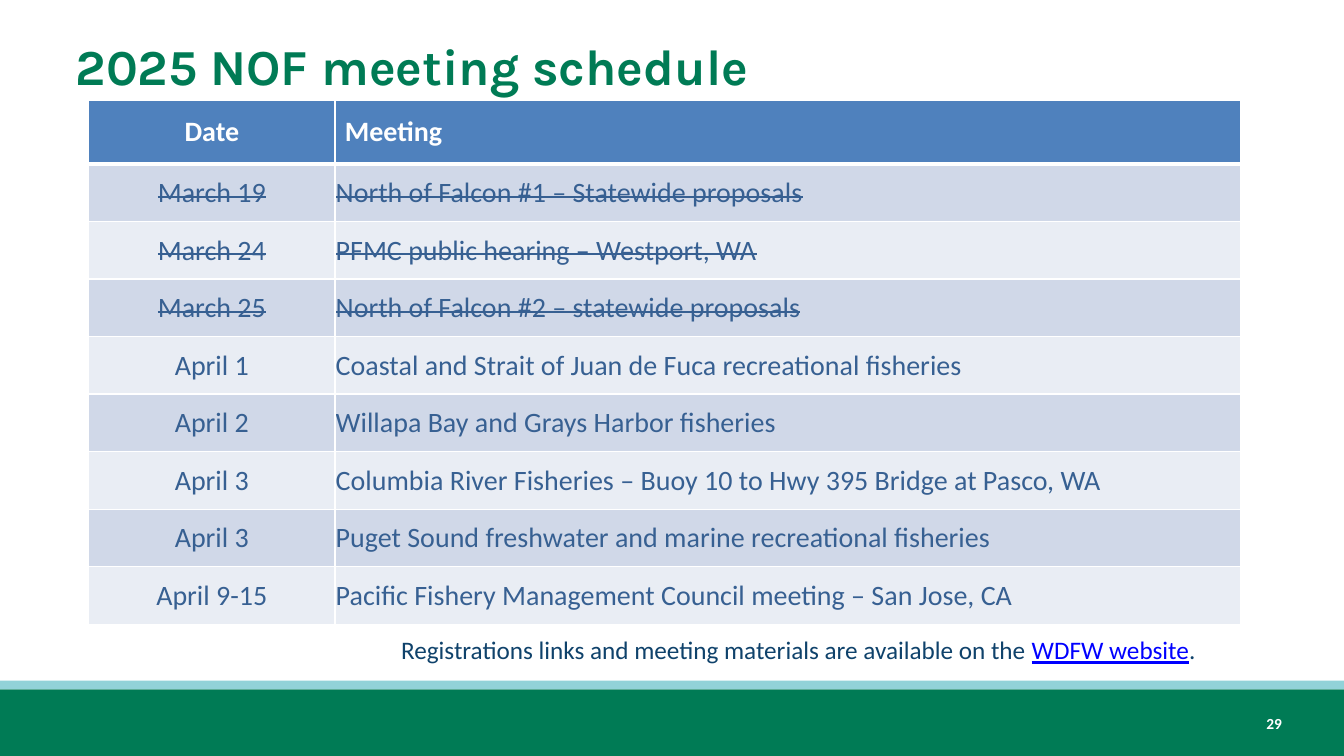
"""Build the 2025 NOF meeting schedule slide."""
from dataclasses import dataclass

from lxml.etree import SubElement
from pptx import Presentation
from pptx.dml.color import RGBColor
from pptx.enum.shapes import MSO_SHAPE
from pptx.enum.text import MSO_ANCHOR, PP_ALIGN
from pptx.oxml.ns import qn
from pptx.util import Cm, Pt


@dataclass(frozen=True)
class Theme:
    green: str = "007B55"
    aqua: str = "92D2D8"
    white: str = "FFFFFF"
    header: str = "4F81BD"
    bands: tuple = ("D0D8E8", "E9EDF4")
    table_text: str = "376092"
    note: str = "0F426B"
    link: str = "0000FF"
    title_font: str = "Karla"
    body_font: str = "Calibri"
    title_size: int = 36
    table_size: int = 20
    note_size: int = 18
    number_size: int = 11


theme = Theme()


def add_text(paragraph, text, size, color, font=theme.body_font, bold=False,
             underline=False, strike=False, align=PP_ALIGN.LEFT):
    paragraph.alignment = align
    run = paragraph.add_run()
    run.text = text
    run.font.name = font
    run.font.size = Pt(size)
    run.font.bold = bold
    run.font.underline = underline
    run.font.color.rgb = RGBColor.from_string(color)
    if strike:
        run.font._element.set("strike", "sngStrike")


def format_cell(cell, fill, margins, borders):
    properties = cell._tc.get_or_add_tcPr()
    for side, width in borders.items():
        line = SubElement(properties, qn(f"a:ln{side}"), w=str(Pt(width)))
        solid = SubElement(line, qn("a:solidFill"))
        SubElement(solid, qn("a:srgbClr"), val=theme.white)
    cell.fill.solid()
    cell.fill.fore_color.rgb = RGBColor.from_string(fill)
    cell.vertical_anchor = MSO_ANCHOR.MIDDLE
    (cell.margin_left, cell.margin_top,
     cell.margin_right, cell.margin_bottom) = [Cm(margin) for margin in margins]


presentation = Presentation()
presentation.slide_width = Cm(33.87)
presentation.slide_height = Cm(19.05)
slide = presentation.slides.add_slide(presentation.slide_layouts[5])

for top, height, color in ((17.37, 1.68, theme.green), (17.15, 0.22, theme.aqua)):
    band = slide.shapes.add_shape(MSO_SHAPE.RECTANGLE, 0, Cm(top),
                                  presentation.slide_width, Cm(height))
    band.shadow.inherit = False
    band.fill.solid()
    band.fill.fore_color.rgb = RGBColor.from_string(color)
    band.line.fill.background()

number = slide.shapes.add_textbox(Cm(30.58), Cm(17.86), Cm(1.98), Cm(0.74))
number.text_frame.word_wrap = True
add_text(number.text_frame.paragraphs[0], "29", theme.number_size, theme.white,
         bold=True, align=PP_ALIGN.RIGHT)

title = slide.shapes.title
title.left, title.top, title.width, title.height = Cm(1.65), Cm(0.43), Cm(30.53), Cm(2.41)
title.text_frame.vertical_anchor = MSO_ANCHOR.MIDDLE
add_text(title.text_frame.paragraphs[0], "2025 NOF meeting schedule", theme.title_size,
         theme.green, font=theme.title_font, bold=True)

meetings = [
    ("Date", "Meeting"),
    ("March 19", "North of Falcon #1 – Statewide proposals"),
    ("March 24", "PFMC public hearing – Westport, WA"),
    ("March 25", "North of Falcon #2 – statewide proposals"),
    ("April 1", "Coastal and Strait of Juan de Fuca recreational fisheries"),
    ("April 2", "Willapa Bay and Grays Harbor fisheries"),
    ("April 3", "Columbia River Fisheries – Buoy 10 to Hwy 395 Bridge at Pasco, WA"),
    ("April 3", "Puget Sound freshwater and marine recreational fisheries"),
    ("April 9-15", "Pacific Fishery Management Council meeting – San Jose, CA"),
]
header_height, row_height = 1.6, 1.45
column_widths = (6.2, 22.83)
table = slide.shapes.add_table(
    len(meetings), len(column_widths), Cm(2.24), Cm(2.53), Cm(sum(column_widths)),
    Cm(header_height + row_height * (len(meetings) - 1))).table
for column, width in zip(table.columns, column_widths):
    column.width = Cm(width)

for row_index, meeting in enumerate(meetings):
    is_header = row_index == 0
    is_past = meeting[0].startswith("March")
    table.rows[row_index].height = Cm(header_height if is_header else row_height)
    fill = theme.header if is_header else theme.bands[(row_index - 1) % 2]
    margins = (0.25, 0.13, 0.25, 0.13) if is_header else (0.02, 0.02, 0.02, 0)
    borders = {"L": 1, "R": 1, "T": 3 if row_index == 1 else 1, "B": 3 if is_header else 1}
    for column_index, text in enumerate(meeting):
        cell = table.cell(row_index, column_index)
        format_cell(cell, fill, margins, borders)
        add_text(cell.text_frame.paragraphs[0], text, theme.table_size,
                 theme.white if is_header else theme.table_text,
                 bold=is_header, strike=is_past,
                 align=PP_ALIGN.LEFT if column_index else PP_ALIGN.CENTER)

note = slide.shapes.add_textbox(Cm(9.86), Cm(15.95), Cm(21.41), Cm(0.94))
note.text_frame.word_wrap = True
note_paragraph = note.text_frame.paragraphs[0]
note_paragraph.line_spacing = 0.9
for text, color, underline in (
        ("Registrations links and meeting materials are available on the ", theme.note, False),
        ("WDFW website", theme.link, True),
        (".", theme.note, False)):
    add_text(note_paragraph, text, theme.note_size, color, underline=underline)

presentation.save("out.pptx")
